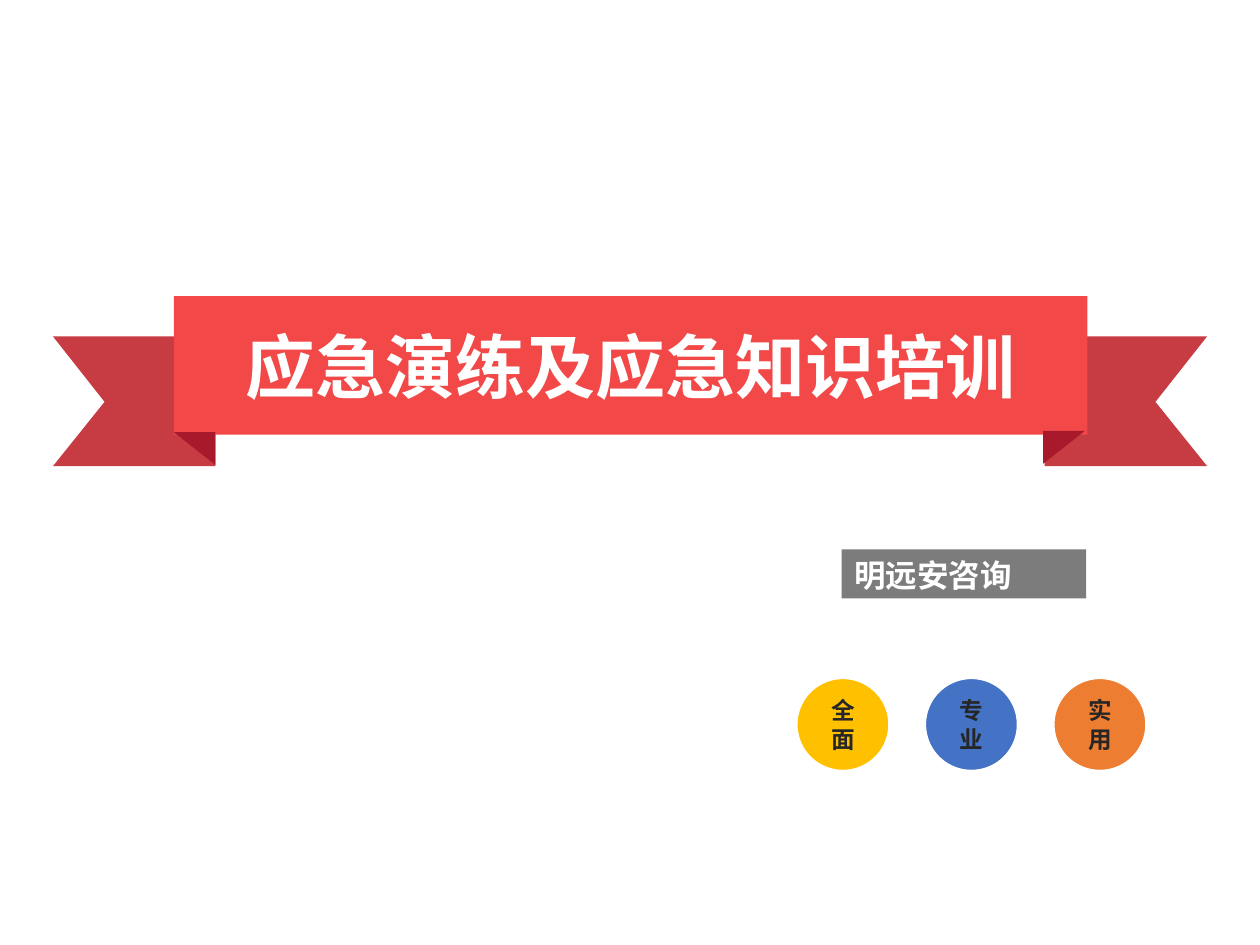
import pptx
import pptx.util
import pptx.dml.color
import pptx.enum.shapes
import pptx.enum.text
import pptx.oxml

Inches = pptx.util.Inches
Kind = pptx.enum.shapes.MSO_SHAPE
Align = pptx.enum.text.PP_ALIGN
Anchor = pptx.enum.text.MSO_ANCHOR


class Deck:
    """Hold the style and the current slide."""

    hues = {
        "white": "FFFFFF", "tail": "C73B42", "band": "F24848", "fold": "A8192B",
        "gray": "7C7C7C", "gold": "FFC000", "blue": "4472C4", "orange": "ED7D31",
        "ink": "262626",
    }
    noto = "Noto Sans CJK SC"
    deja = "DejaVu Sans"

    def __init__(self, wide, high):
        self.file = pptx.Presentation()
        self.file.slide_width = Inches(wide)
        self.file.slide_height = Inches(high)
        self.slide = self.file.slides.add_slide(self.file.slide_layouts[6])

    def hue(self, name):
        return pptx.dml.color.RGBColor.from_string(self.hues[name])

    def paint(self, shape, fill, edge=None):
        shape.shadow.inherit = False
        shape.fill.solid()
        shape.fill.fore_color.rgb = self.hue(fill)
        if edge:
            shape.line.color.rgb = self.hue(edge)
            shape.line.width = pptx.util.Pt(1.5)
        else:
            shape.line.fill.background()
        return shape

    def shape(self, kind, box, fill, edge=None):
        made = self.slide.shapes.add_shape(kind, *map(Inches, box))
        return self.paint(made, fill, edge)

    def tail(self, outer, inner, notch):
        top, mid, base = 2.67, 3.19, 3.7
        dots = [(inner, top), (inner, base), (outer, base), (notch, mid)]
        form = self.slide.shapes.build_freeform(Inches(outer), Inches(top), scale=1)
        form.add_line_segments([(Inches(x), Inches(y)) for x, y in dots])
        self.paint(form.convert_to_shape(), "tail")

    def fold(self, left, top, flip=False):
        made = self.shape(Kind.RIGHT_TRIANGLE, (left, top, 0.33, 0.26), "fold")
        made.rotation = 180
        if flip:
            made._element.spPr.xfrm.set("flipH", "1")

    def text(self, shape, words, size, font, color, align, anchor=Anchor.MIDDLE):
        frame = shape.text_frame
        frame.word_wrap = True
        frame.vertical_anchor = anchor
        para = frame.paragraphs[0]
        para.alignment = align
        run = para.add_run()
        run.text = words
        run.font.size = pptx.util.Pt(size)
        run.font.bold = True
        run.font.name = font
        run.font.color.rgb = self.hue(color)
        east = pptx.oxml.parse_xml(
            '<a:ea xmlns:a="http://schemas.openxmlformats.org/drawingml/2006/main" '
            f'typeface="{font}"/>')
        run.font._element.find(pptx.oxml.ns.qn("a:latin")).addnext(east)


def main():
    deck = Deck(10, 7.5)
    deck.tail(0.42, 1.71, 0.83)
    deck.tail(9.58, 8.29, 9.17)
    band = deck.shape(Kind.RECTANGLE, (1.38, 2.35, 7.25, 1.1), "band")
    deck.text(band, "应急演练及应急知识培训", 40, deck.noto, "white", Align.CENTER)
    deck.fold(1.38, 3.43)
    deck.fold(8.28, 3.42, flip=True)

    label = deck.shape(Kind.RECTANGLE, (6.68, 4.36, 1.94, 0.39), "gray")
    deck.text(label, "明远安咨询", 18, deck.noto, "white", Align.JUSTIFY, Anchor.TOP)

    traits = [("全面", "gold"), ("专业", "blue"), ("实用", "orange")]
    for i, (word, fill) in enumerate(traits):
        left = 6.32 + i * 1.02
        disc = deck.shape(Kind.OVAL, (left, 5.38, 0.74, 0.74), fill, "white")
        deck.text(disc, word, 13.5, deck.deja, "ink", Align.CENTER)
    deck.file.save("out.pptx")


if __name__ == "__main__":
    main()
